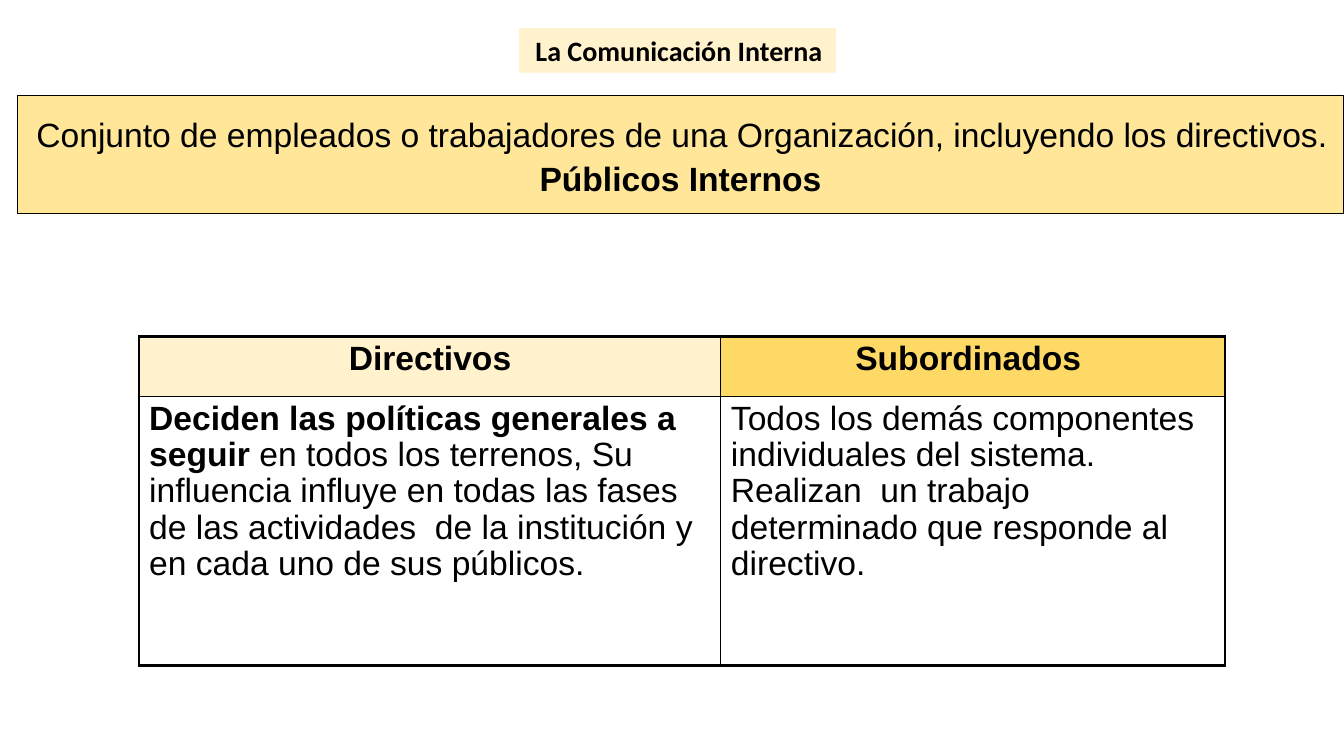
from dataclasses import dataclass

from lxml import etree
from pptx import Presentation
from pptx.dml.color import RGBColor
from pptx.enum.shapes import MSO_SHAPE
from pptx.enum.text import MSO_ANCHOR, PP_ALIGN
from pptx.oxml.ns import qn
from pptx.util import Inches, Pt

RECTANGLE = MSO_SHAPE.RECTANGLE
TOP, MIDDLE = MSO_ANCHOR.TOP, MSO_ANCHOR.MIDDLE
LEFT, CENTER, JUSTIFY = PP_ALIGN.LEFT, PP_ALIGN.CENTER, PP_ALIGN.JUSTIFY

BLACK = RGBColor(0x00, 0x00, 0x00)
CREAM = RGBColor(0xFF, 0xF2, 0xCC)
SAND = RGBColor(0xFF, 0xE6, 0x99)
GOLD = RGBColor(0xFF, 0xD9, 0x66)

THIN, THICK = 1, 2.25


@dataclass
class Run:
    text: str
    bold: bool = False
    font: str = "Arial"
    size: float = 24


@dataclass
class Line:
    runs: list[Run]
    alignment: PP_ALIGN = LEFT
    line_spacing: float = 1.0
    space_before: float = 0


@dataclass
class Box:
    left: float
    top: float
    width: float
    height: float
    fill: RGBColor
    lines: list[Line]
    anchor: MSO_ANCHOR = MIDDLE
    outline: float = 0


@dataclass
class Entry:
    runs: list[Run]
    alignment: PP_ALIGN = LEFT
    fill: RGBColor | None = None


BANNER = Box(0.17, 0.95, 13.16, 1.17, SAND, [
    Line([Run(" Conjunto de empleados o trabajadores de una Organización, "
              "incluyendo los directivos.")], JUSTIFY, 1.07),
    Line([Run("Públicos Internos", True)], CENTER, 1.07),
], outline=0.75)

TITLE = Box(5.15, 0.28, 3.14, 0.44, CREAM, [
    Line([Run(" La Comunicación Interna", True, "Calibri", 20)]),
], TOP)

COLUMN_WIDTHS = [5.77, 5]
ROW_HEIGHTS = [0.59, 2.67]
ENTRIES = [
    [Entry([Run("Directivos", True)], CENTER, CREAM),
     Entry([Run("Subordinados ", True)], CENTER, GOLD)],
    [Entry([Run("Deciden las políticas generales a seguir ", True),
            Run("en todos los terrenos, Su influencia influye en todas las "
                "fases de las actividades  de la institución y en cada uno "
                "de sus públicos.")]),
     Entry([Run("Todos los demás componentes individuales del sistema. "
                "Realizan  un trabajo determinado que responde al  "
                "directivo.")])],
]


def write_line(paragraph, line: Line) -> None:
    layout = {"alignment": line.alignment, "line_spacing": line.line_spacing,
              "space_before": Pt(line.space_before)}
    for name, value in layout.items():
        setattr(paragraph, name, value)
    for item in line.runs:
        run = paragraph.add_run()
        run.text = item.text
        run.font.color.rgb = BLACK
        format_values = {"name": item.font, "size": Pt(item.size),
                         "bold": item.bold}
        for name, value in format_values.items():
            setattr(run.font, name, value)


def add_box(slide, box: Box) -> None:
    shape = slide.shapes.add_shape(
        RECTANGLE, Inches(box.left), Inches(box.top),
        Inches(box.width), Inches(box.height))
    shape.shadow.inherit = False
    shape.fill.solid()
    shape.fill.fore_color.rgb = box.fill
    if box.outline:
        shape.line.color.rgb = BLACK
        shape.line.width = Pt(box.outline)
    else:
        shape.line.fill.background()
    frame = shape.text_frame
    frame.word_wrap = False
    frame.vertical_anchor = box.anchor
    for index, line in enumerate(box.lines):
        paragraph = frame.add_paragraph() if index else frame.paragraphs[0]
        write_line(paragraph, line)


def set_borders(cell, widths: dict[str, float]) -> None:
    properties = cell._tc.get_or_add_tcPr()
    # Borders come before the fill in the cell properties
    for index, (tag, width) in enumerate(widths.items()):
        border = etree.Element(qn(f"a:{tag}"), w=str(Pt(width)))
        fill = etree.SubElement(border, qn("a:solidFill"))
        etree.SubElement(fill, qn("a:srgbClr"), val=str(BLACK))
        properties.insert(index, border)


def add_audience_table(slide) -> None:
    row_count, column_count = len(ROW_HEIGHTS), len(COLUMN_WIDTHS)
    table = slide.shapes.add_table(
        row_count, column_count, Inches(1.38), Inches(3.34),
        Inches(sum(COLUMN_WIDTHS)), Inches(sum(ROW_HEIGHTS))).table
    table.first_row = table.horz_banding = False
    for column, width in zip(table.columns, COLUMN_WIDTHS):
        column.width = Inches(width)
    for row, height in zip(table.rows, ROW_HEIGHTS):
        row.height = Inches(height)

    for row_index, entries in enumerate(ENTRIES):
        for column_index, entry in enumerate(entries):
            cell = table.cell(row_index, column_index)
            if entry.fill is None:
                cell.fill.background()
            else:
                cell.fill.solid()
                cell.fill.fore_color.rgb = entry.fill
            write_line(cell.text_frame.paragraphs[0],
                       Line(entry.runs, entry.alignment, 0.97, 2.5))
            # Thick around the table, thin between cells
            outer_sides = {"lnL": column_index == 0,
                           "lnR": column_index == column_count - 1,
                           "lnT": row_index == 0,
                           "lnB": row_index == row_count - 1}
            set_borders(cell, {tag: THICK if outer else THIN
                               for tag, outer in outer_sides.items()})


def main() -> None:
    presentation = Presentation()
    presentation.slide_width = Inches(13.33)
    presentation.slide_height = Inches(7.5)
    slide = presentation.slides.add_slide(presentation.slide_layouts[6])
    add_box(slide, BANNER)
    add_audience_table(slide)
    add_box(slide, TITLE)
    presentation.save("out.pptx")


if __name__ == "__main__":
    main()
